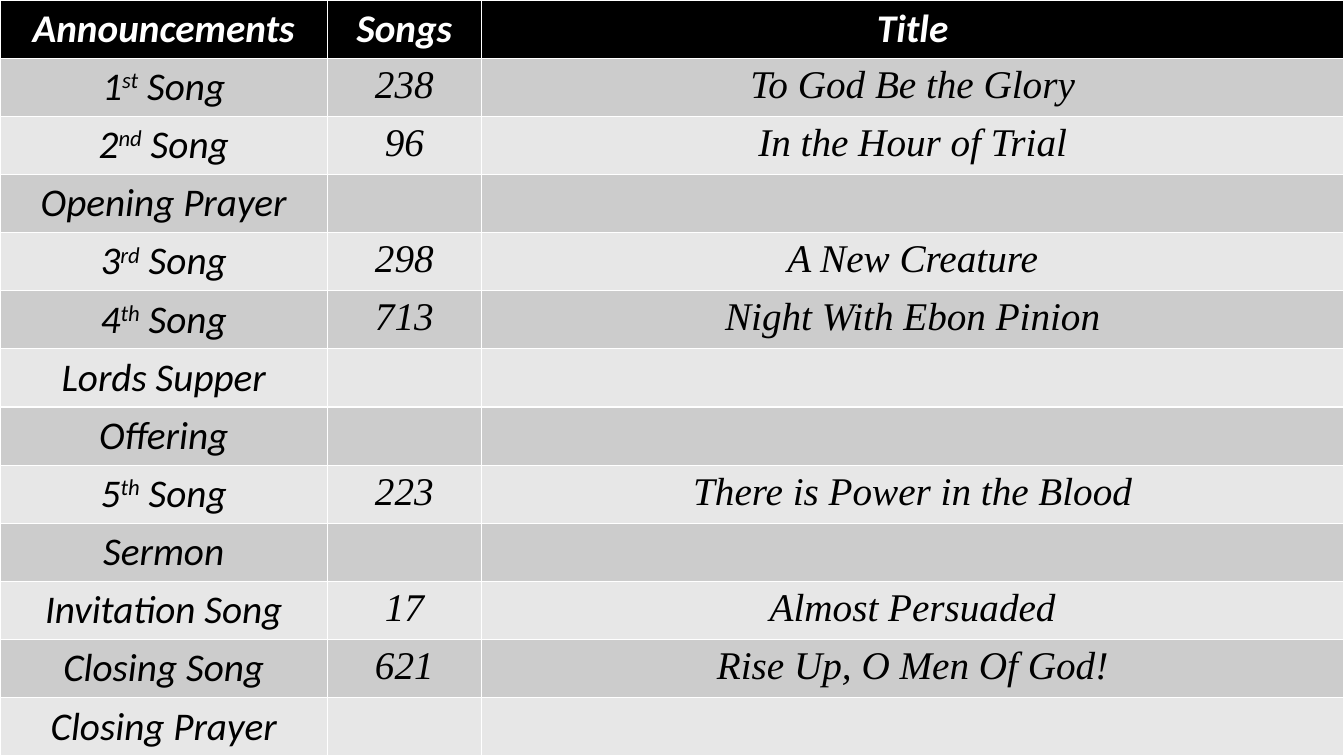
from pptx import Presentation
from pptx.dml.color import RGBColor
from pptx.enum.text import PP_ALIGN
from pptx.util import Cm, Pt

CENTER = PP_ALIGN.CENTER
BLACK, WHITE = "000000", "FFFFFF"
DARK_BAND, LIGHT_BAND = "CCCCCC", "E7E7E7"
LABEL_FONT, SONG_FONT = "Calibri", "Times New Roman"
SLIDE_WIDTH, SLIDE_HEIGHT = Cm(33.87), Cm(19.05)
COLUMN_WIDTHS = [Cm(8.25), Cm(3.88), Cm(21.74)]

# Label pieces alternate between normal text and superscript.
HEADINGS = (["Announcements"], "Songs", "Title")
PROGRAM = [
    (["1", "st", " Song"], "238", "To God Be the Glory"),
    (["2", "nd", " Song"], "96", "In the Hour of Trial"),
    (["Opening Prayer"], "", ""),
    (["3", "rd", " Song"], "298", "A New Creature"),
    (["4", "th", " Song"], "713", "Night With Ebon Pinion"),
    (["Lords Supper"], "", ""),
    (["Offering"], "", ""),
    (["5", "th", " Song"], "223", "There is Power in the Blood"),
    (["Sermon"], "", ""),
    (["Invitation Song"], "17", "Almost Persuaded"),
    (["Closing Song"], "621", "Rise Up, O Men Of God!"),
    (["Closing Prayer"], "", ""),
]


def color(hex_string):
    return RGBColor.from_string(hex_string)


def add_text(paragraph, text, font=LABEL_FONT, text_color=BLACK, bold=False, superscript=False):
    run = paragraph.add_run()
    run.text = text
    run.font.name = font
    run.font.size = Pt(28)
    run.font.bold = bold
    run.font.italic = True
    run.font.color.rgb = color(text_color)
    if superscript:
        run._r.get_or_add_rPr().set("baseline", "30000")


presentation = Presentation()
presentation.slide_width = SLIDE_WIDTH
presentation.slide_height = SLIDE_HEIGHT
slide = presentation.slides.add_slide(presentation.slide_layouts[6])

rows = [HEADINGS] + PROGRAM
table = slide.shapes.add_table(
    len(rows), len(COLUMN_WIDTHS), Cm(0), Cm(0), SLIDE_WIDTH, SLIDE_HEIGHT
).table
for column, width in zip(table.columns, COLUMN_WIDTHS):
    column.width = width

for row_index, (label_pieces, number, title) in enumerate(rows):
    is_heading = row_index == 0
    if is_heading:
        fill_color = BLACK
    else:
        fill_color = DARK_BAND if row_index % 2 else LIGHT_BAND

    for column_index, pieces in enumerate((label_pieces, [number], [title])):
        cell = table.cell(row_index, column_index)
        cell.fill.solid()
        cell.fill.fore_color.rgb = color(fill_color)
        paragraph = cell.text_frame.paragraphs[0]
        paragraph.alignment = CENTER
        for piece_index, piece in enumerate(pieces):
            if piece:
                add_text(
                    paragraph,
                    piece,
                    font=LABEL_FONT if is_heading or column_index == 0 else SONG_FONT,
                    text_color=WHITE if is_heading else BLACK,
                    bold=is_heading,
                    superscript=piece_index == 1,
                )

presentation.save("out.pptx")
